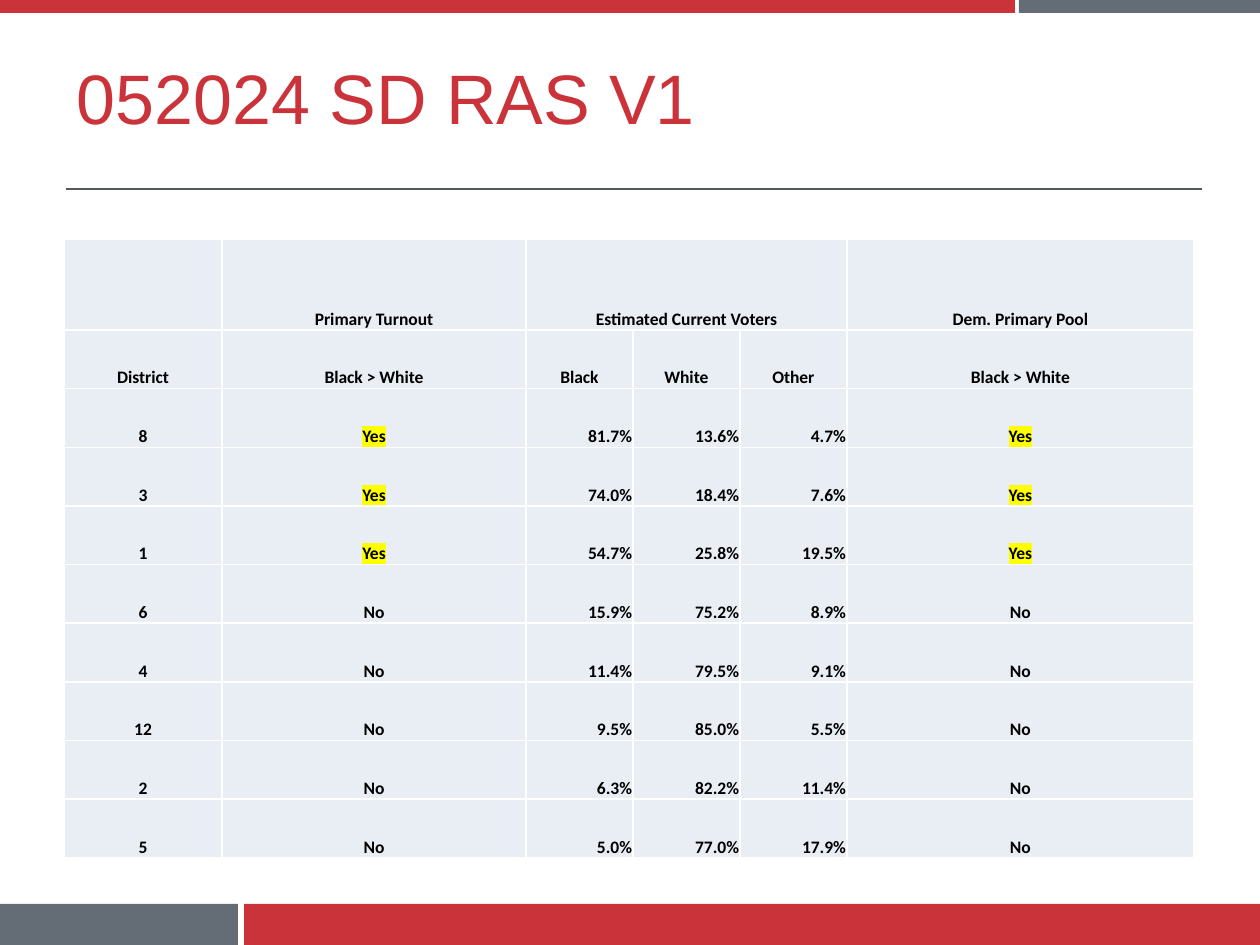
import pptx
import pptx.util
import pptx.dml.color
import pptx.enum.shapes
import pptx.enum.text
import pptx.oxml
import pptx.oxml.ns

RGB = pptx.dml.color.RGBColor
RED = RGB(0xCB, 0x33, 0x3B)
SLATE = RGB(0x64, 0x6D, 0x76)
GRAY = RGB(0x54, 0x58, 0x5A)
PALE = RGB(0xE9, 0xED, 0xF4)
BLACK = RGB(0, 0, 0)
WHITE = RGB(0xFF, 0xFF, 0xFF)
YELLOW = RGB(0xFF, 0xFF, 0)

ALIGN = pptx.enum.text.PP_ALIGN
ANCHOR = pptx.enum.text.MSO_ANCHOR
NS = pptx.oxml.ns.nsdecls("a")

COLS = [158, 304, 107, 107, 107, 347]
HEAD = 91
ROWS = [
    ["", "Primary Turnout", "Estimated Current Voters", "", "", "Dem. Primary Pool"],
    ["District", "Black > White", "Black", "White", "Other", "Black > White"],
    ["8", "Yes", "81.7%", "13.6%", "4.7%", "Yes"],
    ["3", "Yes", "74.0%", "18.4%", "7.6%", "Yes"],
    ["1", "Yes", "54.7%", "25.8%", "19.5%", "Yes"],
    ["6", "No", "15.9%", "75.2%", "8.9%", "No"],
    ["4", "No", "11.4%", "79.5%", "9.1%", "No"],
    ["12", "No", "9.5%", "85.0%", "5.5%", "No"],
    ["2", "No", "6.3%", "82.2%", "11.4%", "No"],
    ["5", "No", "5.0%", "77.0%", "17.9%", "No"],
]


def px(n):
    return pptx.util.Emu(round(n * 914400 / 126))


def band(slide, box, split, gap, left, right):
    """Two coloured bars side by side, with a gap after the split."""
    x, y, w, h = box
    start = split + gap
    for dx, width, color in ((0, split, left), (start, w - start, right)):
        bar = slide.shapes.add_shape(
            pptx.enum.shapes.MSO_SHAPE.RECTANGLE,
            px(x + dx), px(y), px(width), px(h))
        bar.shadow.inherit = False
        bar.fill.solid()
        bar.fill.fore_color.rgb = color
        bar.line.fill.background()


def header(slide, box, text):
    """Title with a rule below it."""
    x, y, w, h = box
    title = slide.shapes.title
    title.left, title.top, title.width, title.height = px(x), px(y), px(w - 187), px(h - 13)
    frame = title.text_frame
    frame.text = text
    frame.vertical_anchor = ANCHOR.MIDDLE
    para = frame.paragraphs[0]
    para.alignment = ALIGN.LEFT
    font = para.runs[0].font
    font.name, font.size = "Arial", pptx.util.Pt(40)
    font.color.rgb = RED

    rule = slide.shapes.add_connector(
        pptx.enum.shapes.MSO_CONNECTOR.STRAIGHT,
        px(x + 2), px(y + h), px(x + w), px(y + h))
    rule.line.color.rgb = GRAY
    rule.line.width = pptx.util.Pt(0.75)
    rule._element.spPr.append(pptx.oxml.parse_xml(f"<a:effectLst {NS}/>"))


def border(cell):
    props = cell._tc.get_or_add_tcPr()
    for i, side in enumerate(("lnL", "lnR", "lnT", "lnB")):
        props.insert(i, pptx.oxml.parse_xml(
            f'<a:{side} {NS} w="12700"><a:solidFill><a:srgbClr val="{WHITE}"/>'
            f'</a:solidFill></a:{side}>'))


def mark(run):
    """Highlight a run; the highlight follows the text colour."""
    fill = run.font._element.find(pptx.oxml.ns.qn("a:solidFill"))
    fill.addnext(pptx.oxml.parse_xml(
        f'<a:highlight {NS}><a:srgbClr val="{YELLOW}"/></a:highlight>'))


def write(cell, text):
    cell.fill.solid()
    cell.fill.fore_color.rgb = PALE
    border(cell)
    cell.vertical_anchor = ANCHOR.BOTTOM
    cell.margin_left = cell.margin_right = cell.margin_top = px(1)
    cell.margin_bottom = 0
    if not text:
        return
    cell.text_frame.text = text
    para = cell.text_frame.paragraphs[0]
    para.alignment = ALIGN.RIGHT if text.endswith("%") else ALIGN.CENTER
    run = para.runs[0]
    font = run.font
    font.name, font.size, font.bold = "Calibri", pptx.util.Pt(10), True
    font.color.rgb = BLACK
    if text == "Yes":
        mark(run)


def grid(slide, box):
    """Table of districts: a tall head row, then equal rows."""
    x, y, w, h = box
    table = slide.shapes.add_table(
        len(ROWS), len(COLS), px(x), px(y), px(w), px(h)).table
    table.first_row = table.horz_banding = False
    for col, width in zip(table.columns, COLS):
        col.width = px(width)
    for row in table.rows:
        row.height = px((h - HEAD) / (len(ROWS) - 1))
    table.rows[0].height = px(HEAD)
    table.cell(0, 2).merge(table.cell(0, 4))
    for r, texts in enumerate(ROWS):
        for c, text in enumerate(texts):
            write(table.cell(r, c), text)


def main():
    deck = pptx.Presentation()
    deck.slide_width, deck.slide_height = px(1260), px(945)
    slide = deck.slides.add_slide(deck.slide_layouts[5])
    # Bottom and top bands
    band(slide, (0, 904, 1260, 41), 238, 6, SLATE, RED)
    band(slide, (0, 0, 1260, 13), 1015, 4, RED, SLATE)
    # Title and table
    header(slide, (64, 16, 1138, 173), "052024 SD RAS V1")
    grid(slide, (64, 239, sum(COLS), 619))
    deck.save("out.pptx")


if __name__ == "__main__":
    main()
